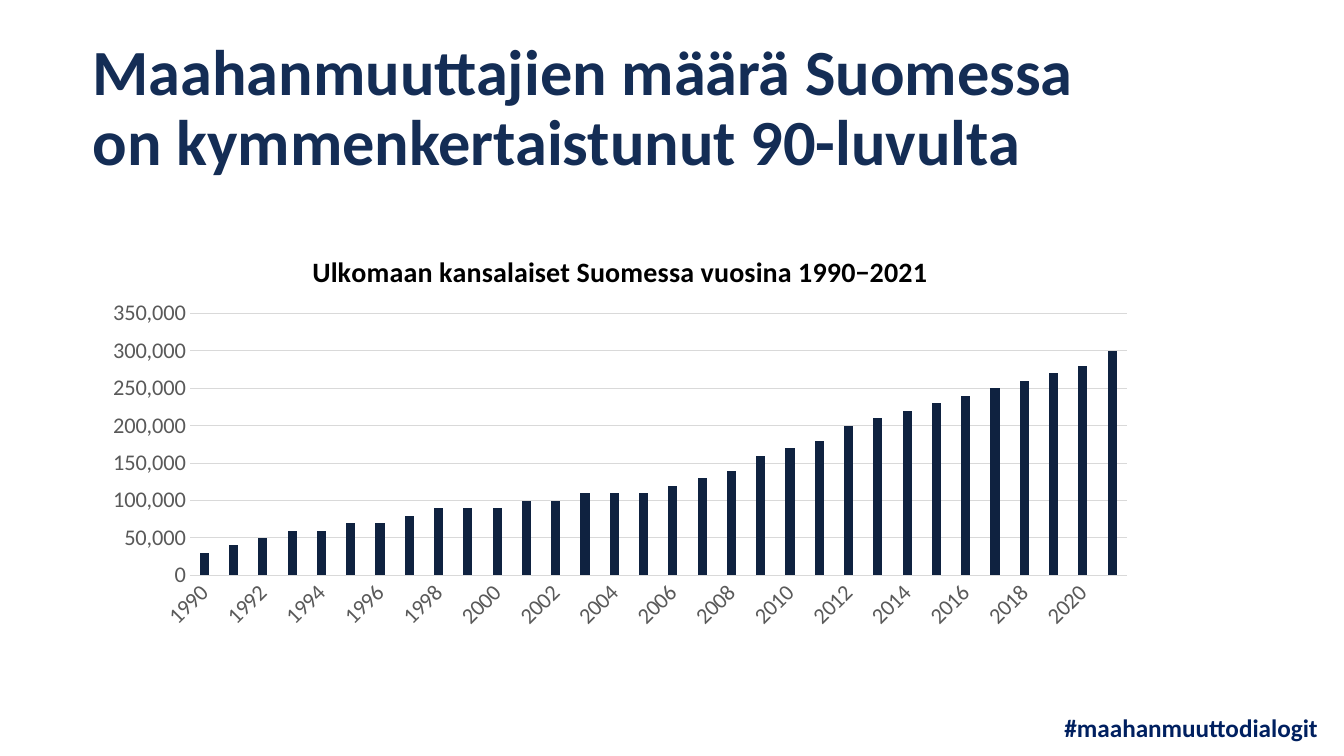
from lxml.etree import SubElement
from pptx import Presentation
from pptx.chart.data import CategoryChartData
from pptx.dml.color import RGBColor
from pptx.enum.chart import XL_CHART_TYPE, XL_TICK_MARK
from pptx.enum.text import MSO_ANCHOR, MSO_AUTO_SIZE, PP_ALIGN
from pptx.oxml.ns import qn
from pptx.util import Pt

FONT = "Calibri"
TEN_THOUSANDS = [
    3, 4, 5, 6, 6, 7, 7, 8, 9, 9, 9, 10, 10, 11, 11, 11,
    12, 13, 14, 16, 17, 18, 20, 21, 22, 23, 24, 25, 26, 27, 28, 30,
]


def color(hex_code):
    return RGBColor.from_string(hex_code)


def style_font(font, size, hex_code, bold=False):
    font.name = FONT
    font.size = Pt(size)
    font.bold = bold
    font.color.rgb = color(hex_code)


def fill_text(frame, text, size, hex_code, spacing):
    frame.margin_left = frame.margin_right = frame.margin_top = frame.margin_bottom = 0
    frame.word_wrap = True
    frame.auto_size = MSO_AUTO_SIZE.NONE
    frame.text = text
    paragraph = frame.paragraphs[0]
    paragraph.alignment = PP_ALIGN.LEFT
    paragraph.line_spacing = spacing
    style_font(paragraph.font, size, hex_code, True)


def add_headline(slide, left, top, width, height):
    headline = slide.shapes.title
    headline.left, headline.top = Pt(left), Pt(top)
    headline.width, headline.height = Pt(width), Pt(height)
    fill_text(
        headline.text_frame,
        "Maahanmuuttajien määrä Suomessa on kymmenkertaistunut 90-luvulta",
        46, "142D55", 0.9,
    )
    headline.text_frame.vertical_anchor = MSO_ANCHOR.BOTTOM


def add_hashtag(slide, left, top, width, height):
    hashtag = slide.shapes.add_textbox(Pt(left), Pt(top), Pt(width), Pt(height))
    fill_text(hashtag.text_frame, "#maahanmuuttodialogit", 18, "002060", 1.1)


def place_plot(plot_area, settings):
    for old_layout in plot_area.findall(qn("c:layout")):
        plot_area.remove(old_layout)
    layout = SubElement(plot_area, qn("c:layout"))
    manual = SubElement(layout, qn("c:manualLayout"))
    for tag, value in settings.items():
        SubElement(manual, qn(f"c:{tag}")).set("val", str(value))
    plot_area.insert(0, layout)


def style_axis(axis):
    axis.major_tick_mark = axis.minor_tick_mark = XL_TICK_MARK.NONE
    style_font(axis.tick_labels.font, 16, "595959")


def style_line(line):
    line.color.rgb = color("D9D9D9")
    line.width = Pt(0.75)


def add_population_chart(slide, left, top, width, height):
    population = CategoryChartData(number_format="#,##0")
    population.categories = [str(1990 + offset) for offset in range(len(TEN_THOUSANDS))]
    population.add_series("Series 1", [count * 10000 for count in TEN_THOUSANDS])
    chart = slide.shapes.add_chart(
        XL_CHART_TYPE.COLUMN_CLUSTERED, Pt(left), Pt(top), Pt(width), Pt(height), population
    ).chart
    style_font(chart.font, 10, "000000")
    chart.has_legend = False

    chart.has_title = True
    caption = chart.chart_title.text_frame
    caption.text = "Ulkomaan kansalaiset Suomessa vuosina 1990−2021"
    style_font(caption.paragraphs[0].font, 20, "000000", True)
    chart.chart_title.include_in_layout = False

    columns = chart.plots[0]
    columns.gap_width, columns.overlap = 219, -27
    columns.vary_by_categories = False
    foreigners = columns.series[0]
    foreigners.format.fill.solid()
    foreigners.format.fill.fore_color.rgb = color("0F2240")

    years, counts = chart.category_axis, chart.value_axis
    style_axis(years)
    style_axis(counts)
    style_line(years.format.line)
    for body in chart.element.xpath(".//c:catAx/c:txPr/a:bodyPr"):
        body.set("rot", "-2700000")
    counts.minimum_scale, counts.maximum_scale, counts.major_unit = 0, 350000, 50000
    counts.tick_labels.number_format = "#,##0"
    counts.tick_labels.number_format_is_linked = False
    counts.format.line.fill.background()
    style_line(counts.major_gridlines.format.line)

    place_plot(
        chart.element.xpath(".//c:plotArea")[0],
        {
            "layoutTarget": "inner", "xMode": "edge", "yMode": "edge",
            "x": 69.3 / width, "y": 57.6 / height,
            "w": 669.4 / width, "h": 187.2 / height,
        },
    )


def main():
    presentation = Presentation()
    presentation.slide_width, presentation.slide_height = Pt(960), Pt(540)
    slide = presentation.slides.add_slide(presentation.slide_layouts[5])
    add_hashtag(slide, 760.3, 506.9, 189.4, 16.6)
    add_headline(slide, 66.2, 30.2, 753.8, 97.9)
    add_population_chart(slide, 66.2, 166.3, 753.8, 289.4)
    presentation.save("out.pptx")


if __name__ == "__main__":
    main()
